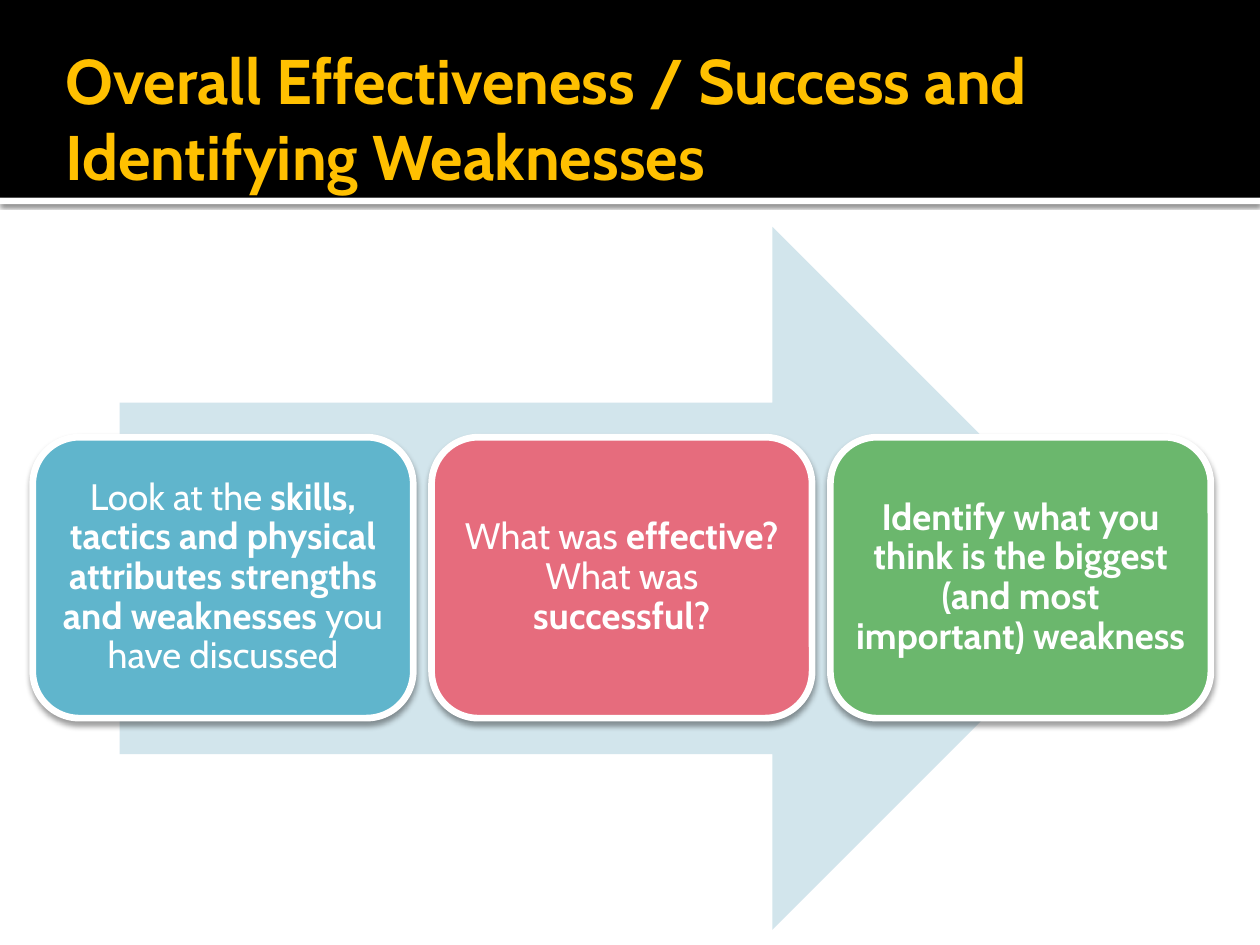
from lxml import etree
from pptx import Presentation
from pptx import util as u
from pptx.dml.color import RGBColor
from pptx.enum import shapes, text
from pptx.oxml import ns

COLOURS = {
    "black": "000000", "white": "FFFFFF", "gold": "FFC000", "pale": "D2E5EC",
    "blue": "60B5CC", "pink": "E66C7D", "green": "6BB76D",
}
FONT = "Cabin"


def add_block(kind, left, top, width, height, colour, shadow=None):
    block = slide.shapes.add_shape(
        kind, u.Inches(left), u.Inches(top), u.Inches(width), u.Inches(height))
    block.shadow.inherit = False
    block.fill.solid()
    block.fill.fore_color.rgb = RGBColor.from_string(COLOURS[colour])
    block.line.fill.background()
    if shadow:
        opacity, blur, distance = shadow
        effects = block._element.spPr.find(ns.qn("a:effectLst"))
        outer = etree.SubElement(
            effects, ns.qn("a:outerShdw"), blurRad=str(u.Pt(blur)),
            dist=str(u.Pt(distance)), dir="5400000", algn="ctr", rotWithShape="0")
        tint = etree.SubElement(outer, ns.qn("a:srgbClr"), val=COLOURS["black"])
        etree.SubElement(tint, ns.qn("a:alpha"), val=str(opacity * 1000))
    return block


def add_run(paragraph, words, size, colour, bold):
    run = paragraph.add_run()
    run.text = words
    run.font.name = FONT
    run.font.size = u.Pt(size)
    run.font.bold = bold
    run.font.color.rgb = RGBColor.from_string(COLOURS[colour])


prs = Presentation()
prs.slide_width, prs.slide_height = u.Inches(10), u.Inches(7.5)
slide = prs.slides.add_slide(prs.slide_layouts[6])
kinds = shapes.MSO_SHAPE

add_block(kinds.RECTANGLE, 0, 1.57, 10, 0.05, "white", (60, 2.5, 0.8))
add_block(kinds.RECTANGLE, 0, 0, 10, 1.57, "black")

title = slide.shapes.add_textbox(
    u.Inches(0.42), u.Inches(0.28), u.Inches(8.56), u.Inches(1.31)).text_frame
title.word_wrap = True
add_run(title.paragraphs[0],
        "Overall Effectiveness / Success and Identifying Weaknesses", 36, "gold", True)

add_block(kinds.RIGHT_ARROW, 0.95, 1.8, 7.97, 5.58, "pale")

steps = [
    ("blue", [("Look at the ", False),
              ("skills, tactics and physical attributes strengths and weaknesses ", True),
              ("you have discussed", False)]),
    ("pink", [("What was ", False), ("effective? ", True),
              ("What was ", False), ("successful?", True)]),
    ("green", [("Identify what you think is the biggest (and most important) weakness",
                True)]),
]
first_left, step_pitch = 0.26, 3.165
for index, (colour, phrases) in enumerate(steps):
    step = add_block(kinds.ROUNDED_RECTANGLE, first_left + index * step_pitch,
                     3.47, 3.02, 2.23, colour, (38, 3.5, 2))
    step.line.color.rgb = RGBColor.from_string(COLOURS["white"])
    step.line.width = u.Pt(3.82)
    frame = step.text_frame
    frame.word_wrap = True
    frame.vertical_anchor = text.MSO_ANCHOR.MIDDLE
    frame.margin_left = frame.margin_right = u.Inches(0.09)
    frame.margin_top = frame.margin_bottom = u.Inches(0.09)
    sentence = frame.paragraphs[0]
    sentence.alignment = text.PP_ALIGN.CENTER
    sentence.line_spacing = 0.9
    for words, bold in phrases:
        add_run(sentence, words, 21, "white", bold)

prs.save("out.pptx")
